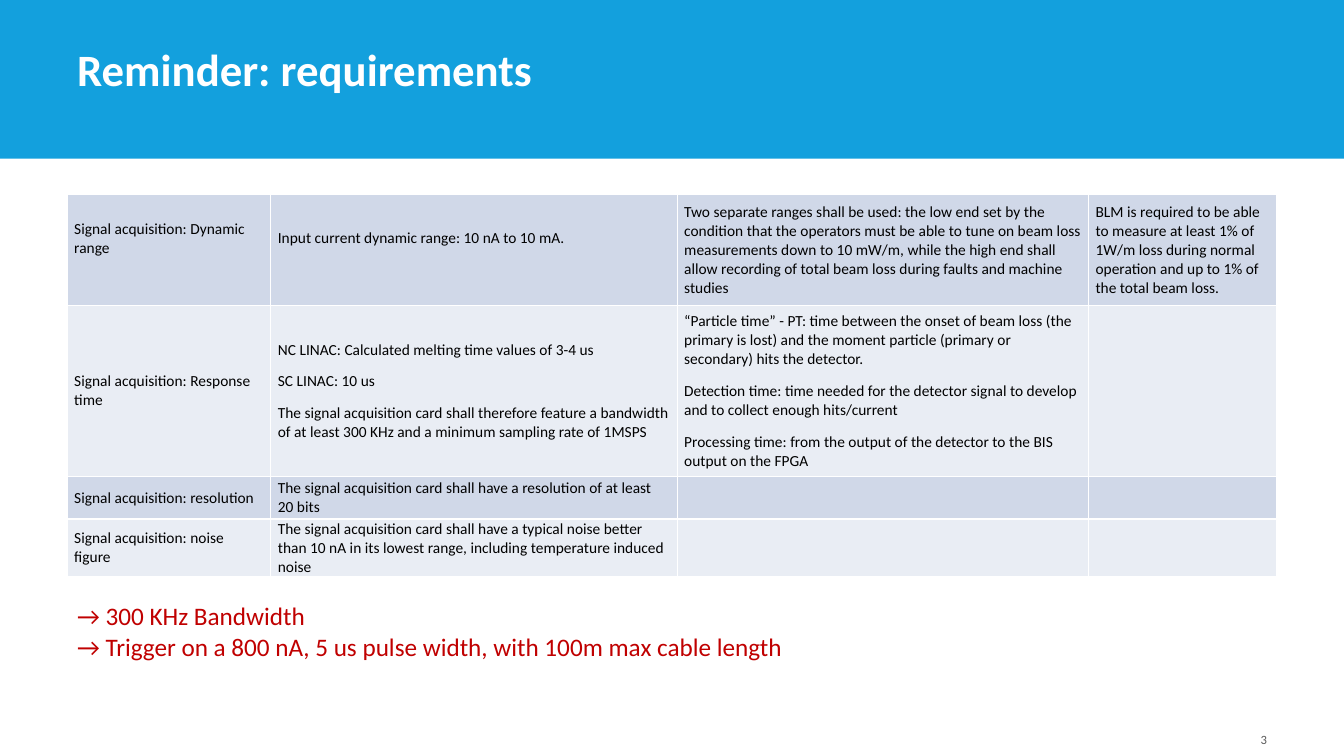
from lxml import etree
from pptx import Presentation
from pptx.dml.color import RGBColor
from pptx.enum.shapes import MSO_SHAPE
from pptx.enum.text import MSO_ANCHOR, PP_ALIGN
from pptx.oxml.ns import qn
from pptx.util import Inches, Pt

RECT = MSO_SHAPE.RECTANGLE
TOP, MIDDLE, BOTTOM = MSO_ANCHOR.TOP, MSO_ANCHOR.MIDDLE, MSO_ANCHOR.BOTTOM
LEFT, RIGHT = PP_ALIGN.LEFT, PP_ALIGN.RIGHT

W, H = 13.33, 7.5
MARGIN = 0.05 * W
COLORS = {
    "banner": "13A0DD",
    "title": "FFFFFF",
    "border": "FFFFFF",
    "odd": "D0D8E8",
    "even": "E9EDF4",
    "text": "000000",
    "finding": "C00000",
    "number": "595959",
}
COLS = [2.02, 4.03, 4.08, 1.87]
ROWS = [1.1, 1.7, 0.42, 0.57]
REQUIREMENTS = [
    [
        ["Signal acquisition: Dynamic range"],
        ["Input current dynamic range: 10 nA to 10 mA."],
        ["Two separate ranges shall be used: the low end set by the condition that "
         "the operators must be able to tune on beam loss measurements down to "
         "10 mW/m, while the high end shall allow recording of total beam loss "
         "during faults and machine studies"],
        ["BLM is required to be able to measure at least 1% of 1W/m loss during "
         "normal operation and up to 1% of the total beam loss."],
    ],
    [
        ["Signal acquisition: Response time"],
        ["NC LINAC: Calculated melting time values of 3-4 us",
         "SC LINAC: 10 us",
         "The signal acquisition card shall therefore feature a bandwidth of at "
         "least 300 KHz and a minimum sampling rate of 1MSPS"],
        ["“Particle time” - PT: time between the onset of beam loss (the primary "
         "is lost) and the moment particle (primary or secondary) hits the detector.",
         "Detection time: time needed for the detector signal to develop and to "
         "collect enough hits/current",
         "Processing time: from the output of the detector to the BIS output on "
         "the FPGA"],
        [],
    ],
    [
        ["Signal acquisition: resolution"],
        ["The signal acquisition card shall have a resolution of at least 20 bits"],
        [],
        [],
    ],
    [
        ["Signal acquisition: noise figure"],
        ["The signal acquisition card shall have a typical noise better than 10 nA "
         "in its lowest range, including temperature induced noise"],
        [],
        [],
    ],
]
FINDINGS = [
    "→ 300 KHz Bandwidth",
    "→ Trigger on a 800 nA, 5 us pulse width, with 100m max cable length",
]


def set_attrs(obj, values):
    for name, value in values.items():
        setattr(obj, name, value)


def write(tf, lines, size, color, bold=False, align=LEFT, gap=0):
    for i, line in enumerate(lines):
        p = tf.paragraphs[0] if i == 0 else tf.add_paragraph()
        set_attrs(p, {"alignment": align, "space_before": Pt(gap if i else 0)})
        r = p.add_run()
        r.text = line
        set_attrs(r.font, {"name": "Calibri", "size": Pt(size), "bold": bold})
        r.font.color.rgb = RGBColor.from_string(COLORS[color])


def add_text(s, box, lines, size, color, anchor=TOP, **style):
    tf = s.shapes.add_textbox(*map(Inches, box)).text_frame
    set_attrs(tf, {"word_wrap": True, "vertical_anchor": anchor})
    write(tf, lines, size, color, **style)


def add_banner(s, box):
    x, y, w, h = box
    sp = s.shapes.add_shape(RECT, *map(Inches, box))
    sp.shadow.inherit = False
    sp.fill.solid()
    sp.fill.fore_color.rgb = RGBColor.from_string(COLORS["banner"])
    sp.line.fill.background()
    title_box = (x + MARGIN, y + 0.24 * h, 0.78 * w, 0.39 * h)
    add_text(s, title_box, ["Reminder: requirements"], 32, "title", BOTTOM, bold=True)


def add_borders(cell):
    tcPr = cell._tc.get_or_add_tcPr()
    for i, side in enumerate(("a:lnL", "a:lnR", "a:lnT", "a:lnB")):
        ln = etree.Element(qn(side), w=str(Pt(1)))
        fill = etree.SubElement(ln, qn("a:solidFill"))
        etree.SubElement(fill, qn("a:srgbClr"), val=COLORS["border"])
        tcPr.insert(i, ln)


def add_requirements(s, box):
    table = s.shapes.add_table(len(ROWS), len(COLS), *map(Inches, box)).table
    for col, width in zip(table.columns, COLS):
        col.width = Inches(width)
    for row, height in zip(table.rows, ROWS):
        row.height = Inches(height)
    for i, row in enumerate(REQUIREMENTS):
        for j, lines in enumerate(row):
            cell = table.cell(i, j)
            raised = i == 0 and j < 2
            set_attrs(cell, {
                "margin_left": Inches(0.07),
                "margin_right": Inches(0.07),
                "margin_top": 0,
                "margin_bottom": Inches(0.23 if raised else 0),
                "vertical_anchor": MIDDLE,
            })
            cell.fill.solid()
            band = COLORS["even" if i % 2 else "odd"]
            cell.fill.fore_color.rgb = RGBColor.from_string(band)
            add_borders(cell)
            write(cell.text_frame, lines, 11, "text", gap=9)


def build():
    prs = Presentation()
    set_attrs(prs, {"slide_width": Inches(W), "slide_height": Inches(H)})
    s = prs.slides.add_slide(prs.slide_layouts[6])
    add_banner(s, (0, 0, W, 0.21 * H))
    add_text(s, (W - MARGIN - 3.11, 7.06, 3.11, 0.4), ["3"], 9, "number", BOTTOM,
             align=RIGHT)
    add_requirements(s, (MARGIN, 1.93, sum(COLS), sum(ROWS)))
    add_text(s, (MARGIN, 5.91, 9.37, 1.01), FINDINGS, 18, "finding")
    prs.save("out.pptx")


if __name__ == "__main__":
    build()
